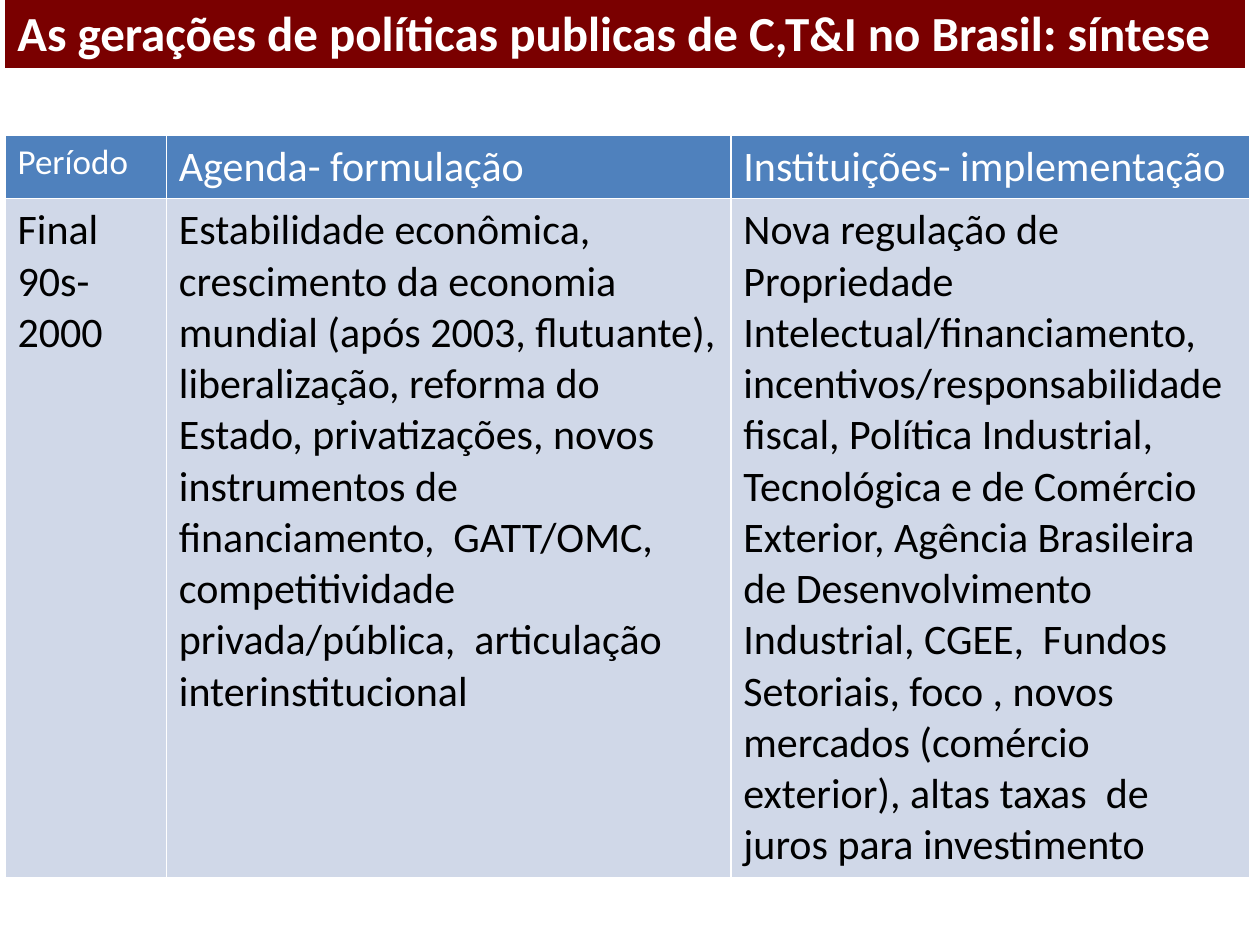
"""Build a slide summarising the generations of Brazilian C,T&I policy."""
import pptx
import pptx.util
import pptx.dml.color
import pptx.enum.shapes
import pptx.enum.text

Inches = pptx.util.Inches

TITLE = "As gerações de políticas publicas de C,T&I no Brasil: síntese"
ROWS = [
    ["Período", "Agenda- formulação", "Instituições- implementação"],
    [
        "Final 90s- 2000",
        "Estabilidade econômica,  crescimento da economia mundial (após 2003, "
        "flutuante), liberalização, reforma do Estado, privatizações, novos "
        "instrumentos de financiamento,  GATT/OMC, competitividade "
        "privada/pública,  articulação interinstitucional",
        "Nova regulação de Propriedade Intelectual/financiamento, "
        "incentivos/responsabilidade fiscal, Política Industrial, Tecnológica "
        "e de Comércio Exterior, Agência Brasileira de Desenvolvimento "
        "Industrial, CGEE,  Fundos Setoriais, foco , novos mercados (comércio "
        "exterior), altas taxas  de juros para investimento",
    ],
]
COL_WIDTHS = [1.28, 4.48, 4.12]
ROW_HEIGHTS = [0.5, 5.38]
THEME = {
    "font": "Calibri",
    "banner": "7A0000",
    "light": "FFFFFF",
    "dark": "000000",
    "header": "4F81BD",
    "body": "D0D8E8",
    "title_size": 28,
    "text_size": 24,
    "period_size": 20,
}


def paint(fill, color):
    fill.solid()
    fill.fore_color.rgb = pptx.dml.color.RGBColor.from_string(THEME[color])


def write(tf, text, size, color, bold=False):
    tf.text = text
    p = tf.paragraphs[0]
    p.alignment = pptx.enum.text.PP_ALIGN.LEFT
    font = p.runs[0].font
    font.name = THEME["font"]
    font.size = pptx.util.Pt(THEME[size])
    font.bold = bold
    font.color.rgb = pptx.dml.color.RGBColor.from_string(THEME[color])


def add_banner(s):
    sp = s.shapes.add_shape(
        pptx.enum.shapes.MSO_SHAPE.RECTANGLE,
        Inches(0.04), Inches(-0.03), Inches(9.84), Inches(0.57))
    sp.shadow.inherit = False
    sp.line.fill.background()
    paint(sp.fill, "banner")
    tf = sp.text_frame
    tf.word_wrap = True
    tf.vertical_anchor = pptx.enum.text.MSO_ANCHOR.TOP
    write(tf, TITLE, "title_size", "light", bold=True)


def add_policy_table(s):
    table = s.shapes.add_table(
        len(ROWS), len(COL_WIDTHS), Inches(0.04), Inches(1.07),
        Inches(sum(COL_WIDTHS)), Inches(sum(ROW_HEIGHTS))).table
    for col, width in zip(table.columns, COL_WIDTHS):
        col.width = Inches(width)
    for i, (row, height) in enumerate(zip(table.rows, ROW_HEIGHTS)):
        row.height = Inches(height)
        fill, color = ("body", "dark") if i else ("header", "light")
        for j, cell in enumerate(row.cells):
            size = "text_size" if i or j else "period_size"
            paint(cell.fill, fill)
            write(cell.text_frame, ROWS[i][j], size, color)


def main():
    prs = pptx.Presentation()
    prs.slide_width, prs.slide_height = Inches(10), Inches(7.5)
    s = prs.slides.add_slide(prs.slide_layouts[6])
    add_banner(s)
    add_policy_table(s)
    prs.save("out.pptx")


if __name__ == "__main__":
    main()
